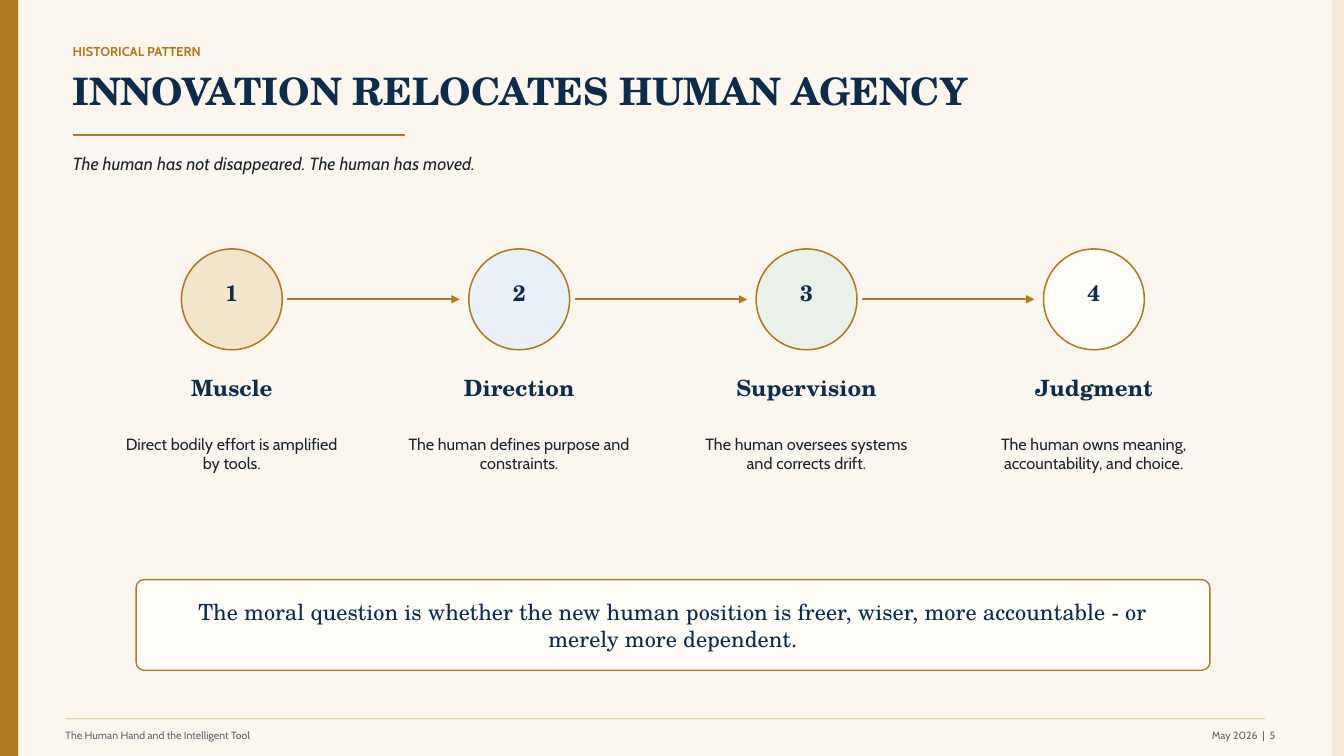
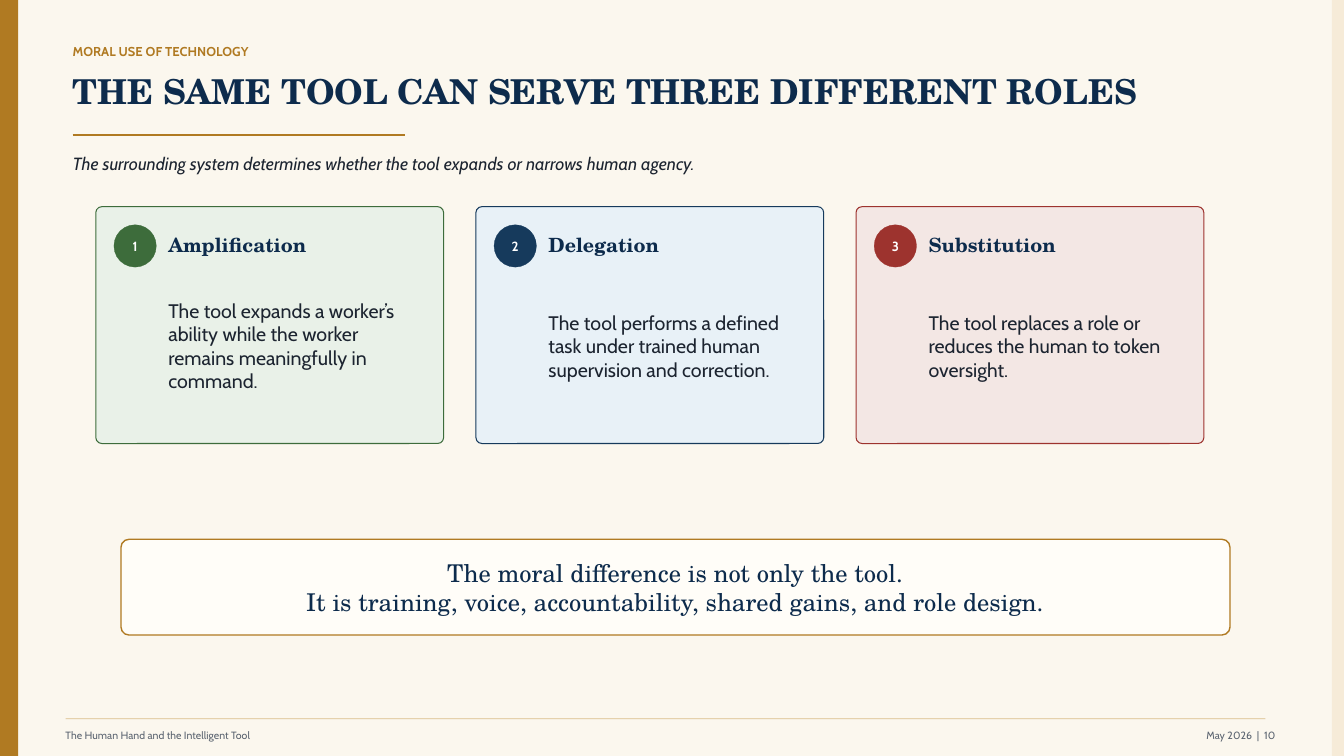
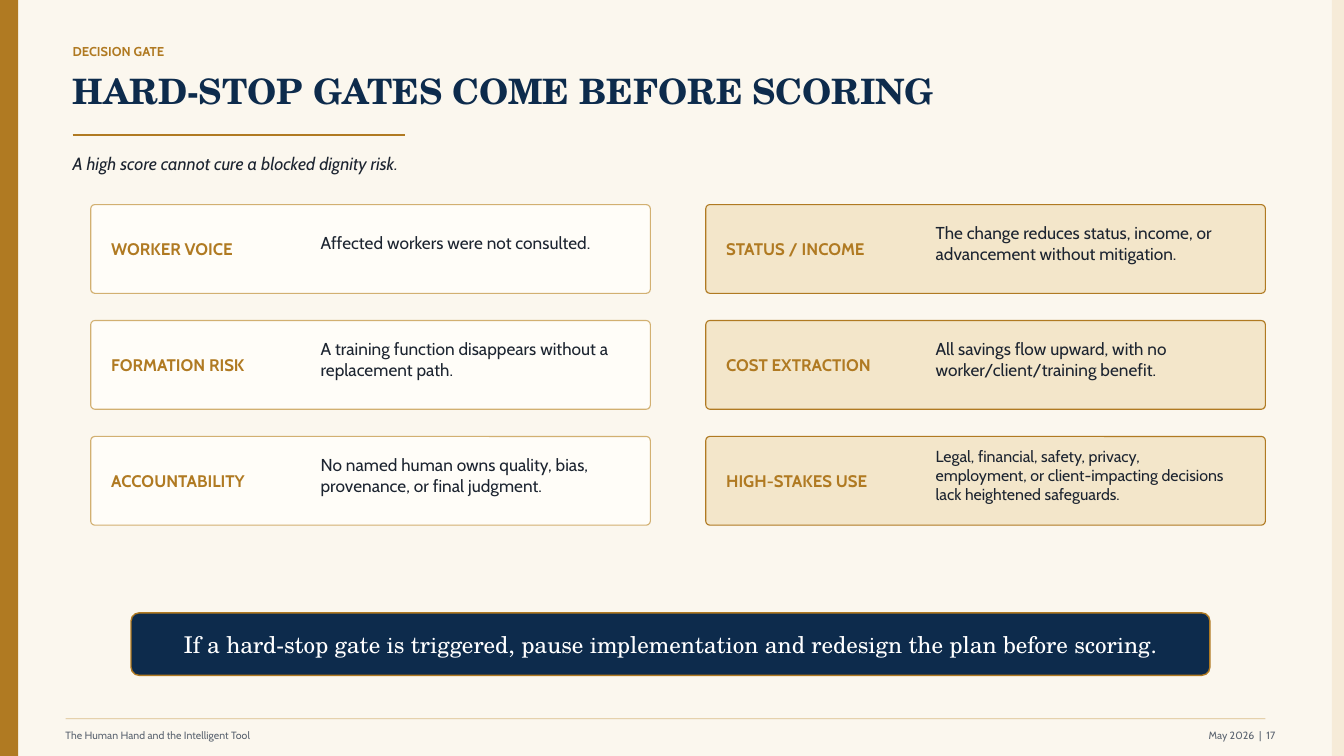
import pptx
import pptx.dml.color
import pptx.enum.shapes
import pptx.enum.text
import pptx.oxml
import pptx.oxml.ns
import pptx.util

Inches = pptx.util.Inches
Pt = pptx.util.Pt
RGBColor = pptx.dml.color.RGBColor
SHAPE = pptx.enum.shapes.MSO_SHAPE
ALIGN = pptx.enum.text.PP_ALIGN
LEFT, CENTER, RIGHT = ALIGN.LEFT, ALIGN.CENTER, ALIGN.RIGHT

PAPER = RGBColor(0xFB, 0xF7, 0xEE)
CREAM = RGBColor(0xF6, 0xEB, 0xD8)
IVORY = RGBColor(0xFF, 0xFD, 0xF8)
WHITE = RGBColor(0xFF, 0xFF, 0xFF)
GOLD = RGBColor(0xB0, 0x7A, 0x22)
TAN = RGBColor(0xD2, 0xB0, 0x71)
SAND = RGBColor(0xF3, 0xE6, 0xCA)
NAVY = RGBColor(0x0D, 0x2B, 0x4C)
BLUE = RGBColor(0x16, 0x3A, 0x5C)
SKY = RGBColor(0xE8, 0xF1, 0xF7)
GREEN = RGBColor(0x3D, 0x6C, 0x3B)
MINT = RGBColor(0xE9, 0xF1, 0xE8)
RED = RGBColor(0x9D, 0x33, 0x2E)
ROSE = RGBColor(0xF3, 0xE7, 0xE4)
INK = RGBColor(0x1C, 0x24, 0x30)
GRAY = RGBColor(0x5B, 0x64, 0x70)

SANS = "Cabin"
SERIF = "TeX Gyre Schola"


def write(shape, text, size, color, face=SANS, align=LEFT, bold=False,
          slant=False, inset=(0, 0, 0, 0)):
    frame = shape.text_frame
    frame.text = text
    frame.word_wrap = True
    frame.auto_size = pptx.enum.text.MSO_AUTO_SIZE.NONE
    frame.vertical_anchor = pptx.enum.text.MSO_ANCHOR.MIDDLE
    (frame.margin_left, frame.margin_top,
     frame.margin_right, frame.margin_bottom) = map(Inches, inset)
    for line in frame.paragraphs:
        line.alignment = align
        for run in line.runs:
            font = run.font
            font.name, font.size, font.color.rgb = face, Pt(size), color
            font.bold, font.italic = bold, slant


def label(slide, box, text, size, color, **style):
    shape = slide.shapes.add_textbox(*map(Inches, box))
    write(shape, text, size, color, **style)


def panel(slide, kind, box, fill, edge=None, weight=1, radius=0):
    shape = slide.shapes.add_shape(kind, *map(Inches, box))
    shape.shadow.inherit = False
    shape.fill.solid()
    shape.fill.fore_color.rgb = fill
    if edge is None:
        shape.line.fill.background()
    else:
        shape.line.color.rgb = edge
        shape.line.width = Pt(weight)
    if radius:
        shape.adjustments[0] = radius / min(box[2:])
    return shape


def rule(slide, start, end, y, color, weight, arrow=False, alpha=None):
    line = slide.shapes.add_connector(
        pptx.enum.shapes.MSO_CONNECTOR.STRAIGHT,
        Inches(start), Inches(y), Inches(end), Inches(y))
    line.line.color.rgb = color
    line.line.width = Pt(weight)
    make = pptx.oxml.ns.qn
    props = line.element.spPr
    stroke = props.find(make("a:ln"))
    if arrow:
        stroke.append(stroke.makeelement(make("a:tailEnd"), {"type": "triangle"}))
    if alpha:
        tint = stroke.find(".//" + make("a:srgbClr"))
        tint.append(tint.makeelement(make("a:alpha"), {"val": str(alpha * 1000)}))
    props.append(props.makeelement(make("a:effectLst"), {}))


def start(deck, topic, title, size, lead, page):
    slide = deck.slides.add_slide(deck.slide_layouts[5])
    panel(slide, SHAPE.RECTANGLE, (0, 0, 0.18, 7.5), GOLD)
    panel(slide, SHAPE.RECTANGLE, (13.21, 0, 0.12, 7.5), CREAM)
    label(slide, (0.72, 0.4, 3.5, 0.22), topic, 9.2, GOLD, bold=True)
    head = slide.shapes.title
    head.left, head.top, head.width, head.height = map(
        Inches, (0.72, 0.65, 11.9, 0.5))
    write(head, title, size, NAVY, face=SERIF, bold=True)
    rule(slide, 0.72, 4.02, 1.34, GOLD, 1.15)
    label(slide, (0.72, 1.47, 11.4, 0.3), lead, 12.6, INK, slant=True)
    rule(slide, 0.65, 12.55, 7.13, TAN, 0.6, alpha=80)
    label(slide, (0.65, 7.18, 5.5, 0.22),
          "The Human Hand and the Intelligent Tool", 7.5, GRAY)
    label(slide, (10.75, 7.18, 1.9, 0.22), f"May 2026  |  {page}", 7.5, GRAY,
          align=RIGHT)
    return slide


def callout(slide, box, text, size, fill=IVORY, color=NAVY):
    shape = panel(slide, SHAPE.ROUNDED_RECTANGLE, box, fill, GOLD, 1, 0.08)
    write(shape, text, size, color, face=SERIF, align=CENTER,
          inset=(0.33, 0, 0.33, 0))


def stage(slide, mid, number, name, note, fill):
    ring = panel(slide, SHAPE.OVAL, (mid - 0.5, 2.47, 1, 1), fill, GOLD, 1.1)
    write(ring, str(number), 16, NAVY, face=SERIF, align=CENTER, bold=True,
          inset=(0, 0, 0, 0.14))
    label(slide, (mid - 0.95, 3.67, 1.9, 0.35), name, 16, NAVY, face=SERIF,
          align=CENTER, bold=True)
    label(slide, (mid - 1.15, 4.14, 2.3, 0.72), note, 11.6, INK, align=CENTER)


def card(slide, left, number, name, note, fill, edge):
    panel(slide, SHAPE.ROUNDED_RECTANGLE, (left, 2.05, 3.45, 2.35),
          fill, edge, 0.75, 0.06)
    dot = panel(slide, SHAPE.OVAL, (left + 0.18, 2.23, 0.42, 0.42),
                edge, edge, 0.2)
    write(dot, str(number), 9.5, WHITE, align=CENTER, bold=True)
    label(slide, (left + 0.72, 2.27, 2.5, 0.32), name, 14, NAVY, face=SERIF,
          bold=True)
    label(slide, (left + 0.72, 2.63, 2.5, 1.6), note, 14, INK)


def gate(slide, left, top, name, note, size, fill, edge):
    shape = panel(slide, SHAPE.ROUNDED_RECTANGLE, (left, top, 5.55, 0.88),
                  fill, edge, 0.8, 0.04)
    write(shape, name, 12, GOLD, bold=True, inset=(0.19, 0, 3.5, 0))
    label(slide, (left + 2.28, top + 0.12, 2.95, 0.52), note, size, INK)


def shift(deck):
    slide = start(deck, "HISTORICAL PATTERN", "INNOVATION RELOCATES HUMAN AGENCY",
                  27, "The human has not disappeared. The human has moved.", 5)
    stages = [
        ("Muscle", "Direct bodily effort is amplified by tools.", SAND),
        ("Direction", "The human defines purpose and constraints.", SKY),
        ("Supervision", "The human oversees systems and corrects drift.", MINT),
        ("Judgment", "The human owns meaning, accountability, and choice.", IVORY),
    ]
    step = 2.85
    for i, item in enumerate(stages):
        mid = 2.3 + i * step
        stage(slide, mid, i + 1, *item)
        if i < len(stages) - 1:
            rule(slide, mid + 0.55, mid + step - 0.59, 2.97, GOLD, 1.3, arrow=True)
    callout(slide, (1.35, 5.75, 10.65, 0.9),
            "The moral question is whether the new human position is freer, "
            "wiser, more accountable - or merely more dependent.", 15.9)


def roles(deck):
    slide = start(deck, "MORAL USE OF TECHNOLOGY",
                  "THE SAME TOOL CAN SERVE THREE DIFFERENT ROLES", 24.5,
                  "The surrounding system determines whether the tool expands "
                  "or narrows human agency.", 10)
    cards = [
        ("Amplification", "The tool expands a worker’s ability while the worker "
         "remains meaningfully in command.", MINT, GREEN),
        ("Delegation", "The tool performs a defined task under trained human "
         "supervision and correction.", SKY, BLUE),
        ("Substitution", "The tool replaces a role or reduces the human to "
         "token oversight.", ROSE, RED),
    ]
    for i, item in enumerate(cards):
        card(slide, 0.95 + i * 3.77, i + 1, *item)
    callout(slide, (1.2, 5.35, 11, 0.95),
            "The moral difference is not only the tool.\n"
            "It is training, voice, accountability, shared gains, and role design.",
            17.5)


def gates(deck):
    slide = start(deck, "DECISION GATE", "HARD-STOP GATES COME BEFORE SCORING", 25,
                  "A high score cannot cure a blocked dignity risk.", 17)
    sides = [
        (0.9, IVORY, TAN, [
            ("WORKER VOICE", "Affected workers were not consulted.", 12.3),
            ("FORMATION RISK", "A training function disappears without a "
             "replacement path.", 12.3),
            ("ACCOUNTABILITY", "No named human owns quality, bias, provenance, "
             "or final judgment.", 12.3),
        ]),
        (7, SAND, GOLD, [
            ("STATUS / INCOME", "The change reduces status, income, or "
             "advancement without mitigation.", 12.3),
            ("COST EXTRACTION", "All savings flow upward, with no "
             "worker/client/training benefit.", 12.3),
            ("HIGH-STAKES USE", "Legal, financial, safety, privacy, employment, "
             "or client-impacting decisions lack heightened safeguards.", 11.4),
        ]),
    ]
    for left, fill, edge, rows in sides:
        for i, row in enumerate(rows):
            gate(slide, left, 2.03 + i * 1.15, *row, fill, edge)
    callout(slide, (1.3, 6.08, 10.7, 0.62),
            "If a hard-stop gate is triggered, pause implementation and "
            "redesign the plan before scoring.", 16.5, NAVY, WHITE)


def main():
    deck = pptx.Presentation()
    deck.slide_width, deck.slide_height = Inches(13.33), Inches(7.5)
    back = deck.slide_master.background.fill
    back.solid()
    back.fore_color.rgb = PAPER
    shift(deck)
    roles(deck)
    gates(deck)
    deck.save("out.pptx")


if __name__ == "__main__":
    main()
